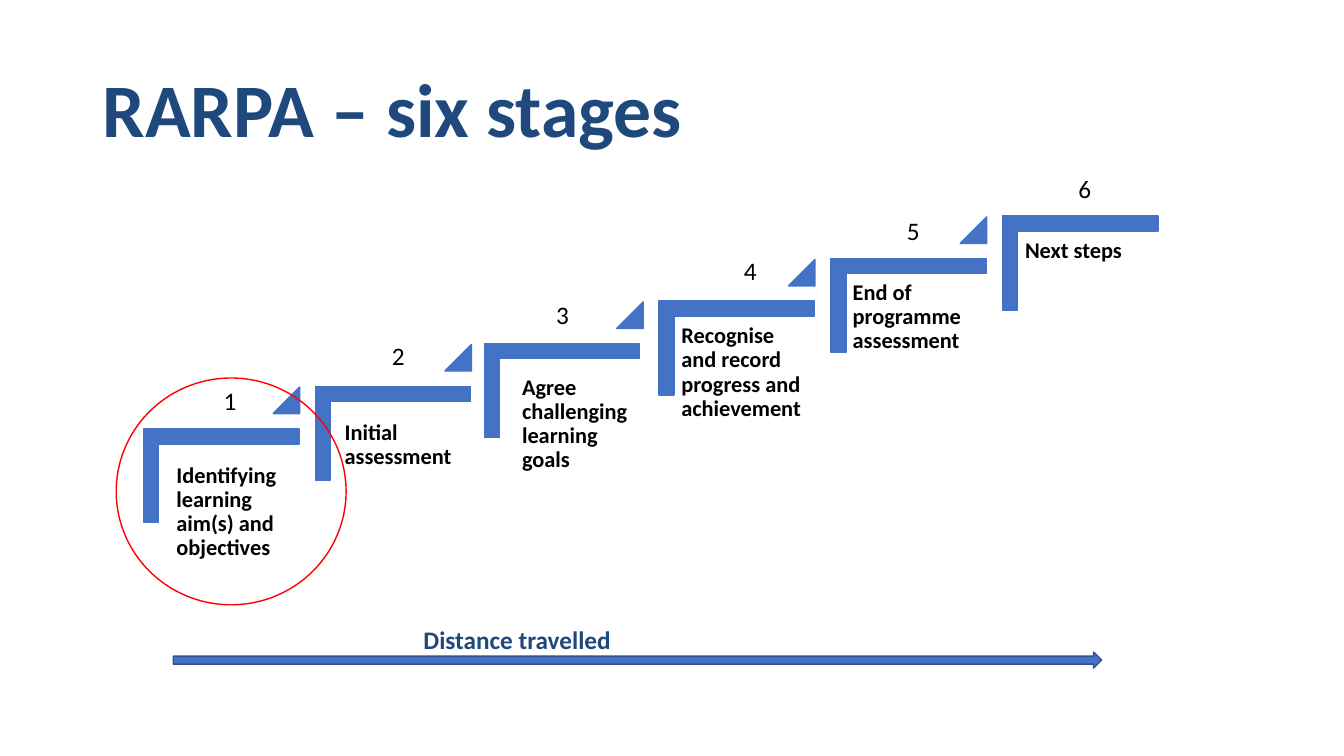
"""Build the RARPA slide: six rising stages above a distance arrow."""
import pptx
import pptx.dml.color
import pptx.enum.shapes
import pptx.enum.text
import pptx.util

Pt = pptx.util.Pt
Shape = pptx.enum.shapes.MSO_SHAPE
Align = pptx.enum.text.PP_ALIGN
Anchor = pptx.enum.text.MSO_ANCHOR
color = pptx.dml.color.RGBColor.from_string
NAVY, BLUE, BLACK = "1F497D", "4472C4", "000000"


def write(box, text, size, ink, bold, inset=None, **para_format):
    """Put one formatted paragraph into a box."""
    frame = box.text_frame
    frame.word_wrap = True
    frame.auto_size = pptx.enum.text.MSO_AUTO_SIZE.NONE
    if inset is not None:
        for side in ("left", "top", "right", "bottom"):
            setattr(frame, f"margin_{side}", Pt(inset))
    para = frame.paragraphs[0]
    for name, value in para_format.items():
        setattr(para, name, value)
    span = para.add_run()
    span.text = text
    for name, value in {"name": "Calibri", "size": Pt(size), "bold": bold}.items():
        setattr(span.font, name, value)
    span.font.color.rgb = color(ink)


def draw(kind, left, top, width, height, fill, line, adjustments=()):
    """Add a preset shape with a thin outline."""
    shape = page.shapes.add_shape(kind, Pt(left), Pt(top), Pt(width), Pt(height))
    shape.shadow.inherit = False
    if fill:
        shape.fill.solid()
        shape.fill.fore_color.rgb = color(fill)
    else:
        shape.fill.background()
    shape.line.color.rgb = color(line)
    shape.line.width = Pt(1)
    for index, value in enumerate(adjustments):
        shape.adjustments[index] = value
    return shape


deck = pptx.Presentation()
deck.slide_width, deck.slide_height = Pt(960), Pt(540)
page = deck.slides.add_slide(deck.slide_layouts[5])

title = page.shapes.title
title.left, title.top, title.width, title.height = Pt(66.2), Pt(47.5), Pt(828), Pt(66.2)
title.text_frame.vertical_anchor = Anchor.MIDDLE
write(title, "RARPA – six stages", 54, NAVY, True, alignment=Align.LEFT, line_spacing=0.9)

caption = page.shapes.add_textbox(Pt(186.5), Pt(442.5), Pt(365.8), Pt(30))
write(caption, "Distance travelled", 18, NAVY, True, alignment=Align.CENTER)
draw(Shape.RIGHT_ARROW, 123.8, 465.8, 663.1, 11.5, BLUE, "325491")

STEP_RIGHT, STEP_UP = 122.7, 30.4
stages = [
    ("Identifying learning aim(s) and objectives", (121, 326.2), (152.6, 271.8), 0),
    ("Initial assessment", (241.2, 295.9), (272.9, 239.4), 0),
    ("Agree challenging learning goals", (367.9, 263.5), (390.2, 210.6), -2),
    ("Recognise and record progress and achievement", (481.7, 226.8), (524.2, 179), 0),
    ("End of programme assessment", (604.1, 195.8), (640.8, 150.2), 0),
    ("Next steps", (727.2, 165.6), (763.2, 120.6), 0),
]
for index, (text, label_at, number_at, nudge) in enumerate(stages):
    right, up = index * STEP_RIGHT, index * STEP_UP
    corner = draw(Shape.CORNER, 124.6 + right + nudge, 284.4 - up, 67, 110.9,
                  BLUE, BLUE, (0.16, 0.16))
    corner.rotation = 90
    label = page.shapes.add_textbox(*map(Pt, label_at), Pt(100.1), Pt(87.8))
    write(label, text, 16, BLACK, True, inset=5, line_spacing=0.9)
    if index < len(stages) - 1:
        draw(Shape.ISOSCELES_TRIANGLE, 195.1 + right, 276.5 - up, 18.9, 18.9, BLUE, BLUE, (1,))
    number = page.shapes.add_textbox(*map(Pt, number_at), Pt(33.8), Pt(30))
    write(number, str(index + 1), 18, BLACK, False)

draw(Shape.OVAL, 83, 270, 164.2, 162, None, "FF0000")

deck.save("out.pptx")
